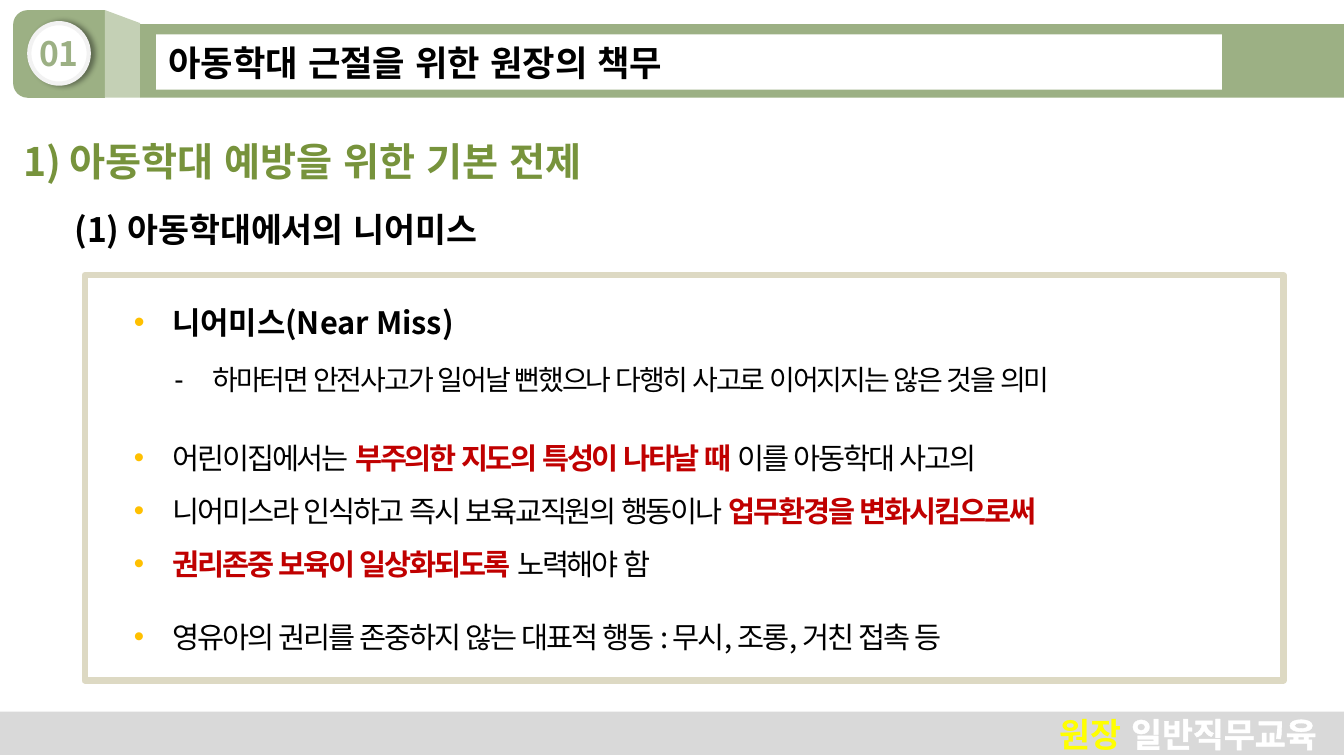
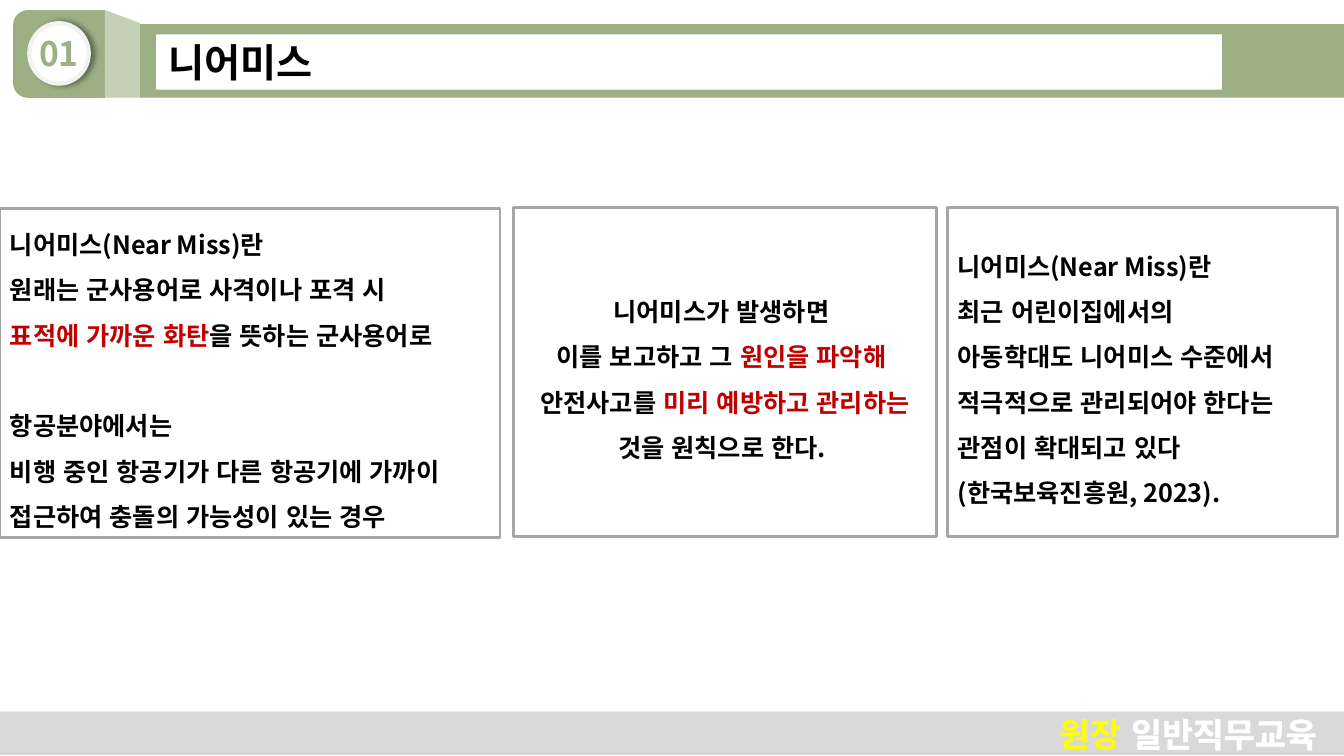
from lxml import etree
from pptx import Presentation
from pptx.dml.color import RGBColor
from pptx.enum.shapes import MSO_SHAPE
from pptx.enum.text import MSO_ANCHOR, PP_ALIGN
from pptx.oxml.ns import qn
from pptx.util import Inches, Pt

RECT, OVAL = MSO_SHAPE.RECTANGLE, MSO_SHAPE.OVAL
TAB = MSO_SHAPE.ROUND_2_SAME_RECTANGLE
LEFT, CENTER, RIGHT, JUSTIFY = (PP_ALIGN.LEFT, PP_ALIGN.CENTER,
                                PP_ALIGN.RIGHT, PP_ALIGN.JUSTIFY)
TOP, MIDDLE = MSO_ANCHOR.TOP, MSO_ANCHOR.MIDDLE
FONT, NUMBER_FONT = "Noto Sans CJK KR", "Noto Sans CJK SC"
WIDTH, HEIGHT = 13.33, 7.5

C = {
    "white": "FFFFFF", "black": "000000", "red": "C00000", "yellow": "FFFF00",
    "sage": "9CB084", "pale_sage": "C4D0B5", "olive": "77933C",
    "footer": "D9D9D9", "ring": "F2F2F2", "sand": "DDD9C3",
    "gray": "A6A6A6", "bullet": "FFC000",
}

# Content: text between bars is emphasised
SECTION = "01"
FOOTER = "|원장| 일반직무교육 "
TITLES = [("아동학대 근절을 위한 원장의 책무", 25.2), ("니어미스", 28)]
HEADINGS = [  # text, left, top, height, size, colour
    ("1) 아동학대 예방을 위한 기본 전제", 0.13, 1.31, 0.57, 28, "olive"),
    ("(1) 아동학대에서의 니어미스", 0.64, 2.02, 0.5, 24, "black"),
]
TERM = "니어미스(Near Miss)"
MEANING = "하마터면 안전사고가 일어날 뻔했으나 다행히 사고로 이어지지는 않은 것을 의미"
POINTS = [
    "어린이집에서는 |부주의한 지도의 특성이 나타날 때| 이를 아동학대 사고의 ",
    "니어미스라 인식하고 즉시 보육교직원의 행동이나 |업무환경을 변화시킴으로써 |",
    "|권리존중 보육이 일상화되도록| 노력해야 함",
    "영유아의 권리를 존중하지 않는 대표적 행동 : 무시, 조롱, 거친 접촉 등",
]
CARDS = [  # left, top, width, alignment, lines, gap before a line
    (0, 2.07, 4.96, LEFT, [
        "니어미스(Near Miss)란",
        "원래는 군사용어로 사격이나 포격 시",
        "|표적에 가까운 화탄|을 뜻하는 군사용어로",
        "항공분야에서는",
        "비행 중인 항공기가 다른 항공기에 가까이 접근하여 충돌의 가능성이 있는 경우",
    ], {3: 32.4}),
    (5.09, 2.06, 4.2, CENTER, [
        "니어미스가 발생하면 ",
        "이를 보고하고 그 |원인을 파악해 |",
        "안전사고를 |미리 예방하고 관리하는 |것을 원칙으로 한다. ",
    ], {}),
    (9.4, 2.06, 3.87, LEFT, [
        "니어미스(Near Miss)란",
        "최근 어린이집에서의",
        "아동학대도 니어미스 수준에서 적극적으로 관리되어야 한다는 관점이 확대되고 있다",
        "(한국보육진흥원, 2023).",
    ], {}),
]


def rgb(name):
    return RGBColor.from_string(C[name])


def paint(sp, fill, line=None, weight=1):
    sp.shadow.inherit = False
    sp.fill.solid()
    sp.fill.fore_color.rgb = rgb(fill)
    if line:
        sp.line.color.rgb = rgb(line)
        sp.line.width = Pt(weight)
    else:
        sp.line.fill.background()
    return sp


def add_box(s, at, fill, line=None, weight=1, kind=RECT):
    return paint(s.shapes.add_shape(kind, *map(Inches, at)), fill, line, weight)


def add_bullet(p, mark, color):
    pPr = p._p.get_or_add_pPr()
    pPr.set("marL", str(Inches(0.38)))
    pPr.set("indent", str(-Inches(0.38)))
    if color:
        clr = etree.SubElement(pPr, qn("a:buClr"))
        etree.SubElement(clr, qn("a:srgbClr"), val=C[color])
    etree.SubElement(pPr, qn("a:buFont"), typeface="Arial")
    etree.SubElement(pPr, qn("a:buChar"), char=mark)


def write(sp, lines, size, color="black", bold=True, align=LEFT, anchor=TOP,
          inset=(0.1, 0.05), spacing=None, gaps=None, bullet=None,
          tracking=None, accent="red", font=FONT):
    tf = sp.text_frame
    tf.word_wrap = True
    tf.vertical_anchor = anchor
    tf.margin_left = tf.margin_right = Inches(inset[0])
    tf.margin_top = tf.margin_bottom = Inches(inset[1])
    for i, line in enumerate(lines):
        p = tf.add_paragraph() if i else tf.paragraphs[0]
        p.alignment = align
        if spacing:
            p.line_spacing = spacing
        if gaps and i in gaps:
            p.space_before = Pt(gaps[i])
        if bullet:
            add_bullet(p, *bullet)
        for n, part in enumerate(line.split("|")):
            if not part:
                continue
            r = p.add_run()
            r.text = part
            r.font.size = Pt(size)
            r.font.bold = bold or n % 2 == 1
            r.font.color.rgb = rgb(accent if n % 2 else color)
            r.font.name = font
            rPr = r._r.get_or_add_rPr()
            rPr.set("lang", "ko-KR")
            etree.SubElement(rPr, qn("a:ea"), typeface=font)
            if tracking:
                rPr.set("spc", str(int(tracking * 100)))
    return tf


def add_text(s, at, lines, size, **style):
    return write(s.shapes.add_textbox(*map(Inches, at)), lines, size, **style)


def outline_text(tf, color, weight):
    for r in tf.paragraphs[0].runs:
        ln = etree.Element(qn("a:ln"), w=str(Pt(weight)))
        fill = etree.SubElement(ln, qn("a:solidFill"))
        etree.SubElement(fill, qn("a:srgbClr"), val=C[color])
        r._r.get_or_add_rPr().insert(0, ln)


def add_shadow(sp):
    effects = sp._element.spPr.find(qn("a:effectLst"))
    shadow = etree.SubElement(effects, qn("a:outerShdw"), blurRad=str(Pt(4)),
                              dist=str(Pt(3)), dir="0", rotWithShape="0")
    clr = etree.SubElement(shadow, qn("a:srgbClr"), val=C["black"])
    etree.SubElement(clr, qn("a:alpha"), val="40000")


def add_slide(prs, title, size):
    s = prs.slides.add_slide(prs.slide_layouts[6])
    # Footer
    add_box(s, (0, 7.06, WIDTH, 0.43), "footer")
    tf = add_text(s, (6.59, 7.03, 6.66, 0.5), [FOOTER], 24, color="white",
                  accent="yellow", align=RIGHT)
    outline_text(tf, "white", 0.75)
    # Header ribbon: tab, fold, band
    add_box(s, (0.15, 0.08, 0.87, 0.91), "sage", kind=TAB).rotation = 270
    fold = s.shapes.build_freeform(Inches(1.04), Inches(0.97))
    fold.add_line_segments([(Inches(x), Inches(y)) for x, y in
                            ((1.04, 0.1), (1.39, 0.23), (1.39, 0.97))])
    paint(fold.convert_to_shape(), "pale_sage")
    add_box(s, (1.39, 0.24, WIDTH - 1.39, 0.73), "sage")
    # Section number
    badge = add_box(s, (0.29, 0.23, 0.59, 0.6), "white", "ring", 3, OVAL)
    add_shadow(badge)
    write(badge, [SECTION], 24, color="sage", align=CENTER, anchor=MIDDLE,
          inset=(0, 0), font=NUMBER_FONT)
    # Title
    write(add_box(s, (1.55, 0.34, 10.57, 0.55), "white"), [title], size,
          anchor=MIDDLE, inset=(0.12, 0.06))
    return s


def fill_premise(s):
    add_box(s, (0.84, 2.73, 11.89, 4.02), "white", "sand", 4.5)
    for text, left, top, height, size, color in HEADINGS:
        add_text(s, (left, top, 6.81, height), [text], size, color=color)
    dot = ("•", "bullet")
    add_text(s, (1.23, 2.96, 6.81, 0.47), [TERM], 22, bullet=dot)
    add_text(s, (1.63, 3.55, 11.02, 0.44), [MEANING], 20, bold=False,
             align=JUSTIFY, bullet=("-", None), tracking=-1.5)
    add_text(s, (1.23, 4.14, 11.1, 2.36), POINTS, 21, bold=False,
             align=JUSTIFY, spacing=1.5, gaps={3: 14.4}, bullet=dot,
             tracking=-1.5)


def fill_near_miss(s):
    for left, top, width, align, lines, gaps in CARDS:
        card = add_box(s, (left, top, width, 3.26), "white", "gray", 2)
        write(card, lines, 18, align=align, anchor=MIDDLE, spacing=1.5,
              gaps=gaps)


def main():
    prs = Presentation()
    prs.slide_width, prs.slide_height = Inches(WIDTH), Inches(HEIGHT)
    for (title, size), fill in zip(TITLES, (fill_premise, fill_near_miss)):
        fill(add_slide(prs, title, size))
    prs.save("out.pptx")


if __name__ == "__main__":
    main()
